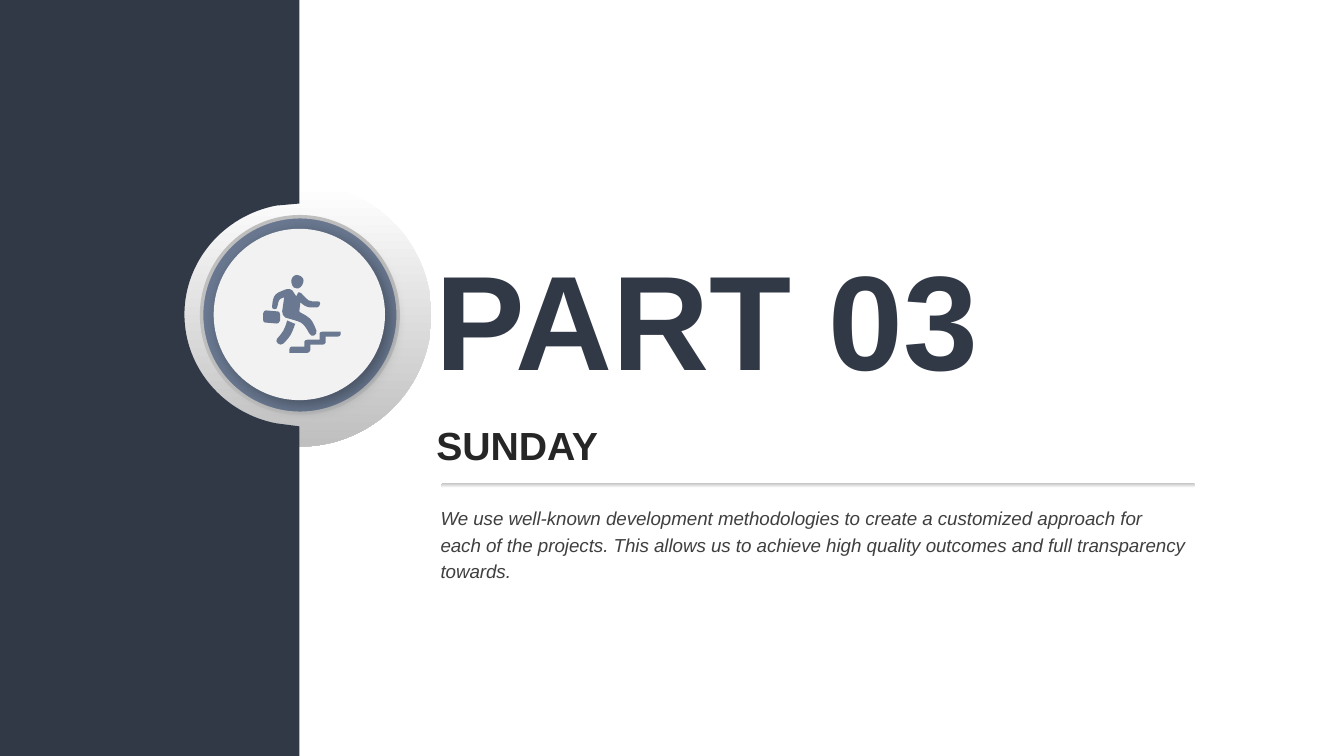
"""Build the PART 03 section slide with its side panel and climber badge."""
from dataclasses import dataclass
from typing import Any, Optional

from lxml import etree
from pptx import Presentation
from pptx.dml.color import RGBColor
from pptx.enum.shapes import MSO_SHAPE
from pptx.enum.text import MSO_ANCHOR, MSO_AUTO_SIZE, PP_ALIGN
from pptx.oxml.ns import qn
from pptx.util import Inches, Pt

OVAL = MSO_SHAPE.OVAL
ROUNDED = MSO_SHAPE.ROUNDED_RECTANGLE
TOP = MSO_ANCHOR.TOP
GROW = MSO_AUTO_SIZE.SHAPE_TO_FIT_TEXT
LEFT = PP_ALIGN.LEFT
JUSTIFIED = PP_ALIGN.JUSTIFY

WHITE = RGBColor(0xFF, 0xFF, 0xFF)
SILVER = RGBColor(0xBF, 0xBF, 0xBF)
PALE = RGBColor(0xF2, 0xF2, 0xF2)
SLATE = RGBColor(0x6A, 0x79, 0x91)
NAVY = RGBColor(0x31, 0x38, 0x46)
SHADOW = RGBColor(0x35, 0x3C, 0x48)
CHARCOAL = RGBColor(0x26, 0x26, 0x26)
GRAY = RGBColor(0x3F, 0x3F, 0x3F)

FONT_NAME = "Arial"
SECTION_LAYOUT = 2

Contour = list[tuple[float, ...]]


@dataclass
class Preset:
    kind: MSO_SHAPE
    box: tuple[float, float, float, float]
    fill: Optional[RGBColor] = None
    line: Optional[RGBColor] = None
    shadow: bool = False


@dataclass
class Outline:
    fill: RGBColor
    contours: list[Contour]


@dataclass
class Label:
    text: str
    box: tuple[float, float, float, float]
    font: dict[str, Any]
    color: RGBColor
    paragraph: dict[str, Any]
    placeholder: Optional[int] = None


BADGE = [
    Preset(OVAL, (1.67, 1.82, 2.61, 2.61)),
    Preset(OVAL, (2, 2.15, 1.95, 1.95), SLATE, SILVER),
    Preset(OVAL, (2.12, 2.27, 1.7, 1.7), PALE, shadow=True),
]
DIVIDER = Preset(ROUNDED, (4.38, 4.79, 7.48, 0.05))

PANEL = Outline(NAVY, [[
    (0, 0), (2.97, 0), (2.97, 2.02), (2.74, 2.04),
    (2.22, 2.14, 1.83, 2.59, 1.83, 3.12),
    (1.83, 3.65, 2.22, 4.1, 2.74, 4.2),
    (2.97, 4.23), (2.97, 7.5), (0, 7.5),
]])

STAIRS = Outline(SLATE, [[
    (2.89, 3.44), (3.02, 3.44), (3.02, 3.39),
    (3.02, 3.38, 3.03, 3.37, 3.05, 3.37), (3.17, 3.37), (3.17, 3.31),
    (3.17, 3.3, 3.18, 3.29, 3.2, 3.29), (3.38, 3.29), (3.38, 3.32),
    (3.38, 3.33, 3.36, 3.34, 3.35, 3.34), (3.23, 3.34), (3.23, 3.4),
    (3.23, 3.41, 3.21, 3.42, 3.2, 3.42), (3.08, 3.42), (3.08, 3.47),
    (3.08, 3.49, 3.06, 3.5, 3.05, 3.5), (2.87, 3.5), (2.87, 3.47),
    (2.87, 3.45, 2.88, 3.44, 2.89, 3.44),
]])

BRIEFCASE: Contour = [
    (2.63, 3.2), (2.75, 3.21), (2.76, 3.21, 2.77, 3.2, 2.78, 3.18),
    (2.78, 3.12), (2.78, 3.11, 2.77, 3.09, 2.76, 3.09), (2.64, 3.08),
    (2.63, 3.08, 2.61, 3.09, 2.61, 3.11), (2.61, 3.17),
    (2.61, 3.19, 2.62, 3.2, 2.63, 3.2),
]
BACK_LEG: Contour = [
    (2.75, 3.36), (2.81, 3.29, 2.82, 3.28, 2.85, 3.18),
    (2.87, 3.19, 2.9, 3.2, 2.92, 3.21), (2.93, 3.21),
    (2.89, 3.32, 2.89, 3.33, 2.81, 3.41), (2.78, 3.44, 2.72, 3.39, 2.75, 3.36),
]
HEAD: Contour = [
    (2.96, 2.73), (3, 2.74, 3.02, 2.77, 3.01, 2.8),
    (3, 2.84, 2.97, 2.87, 2.94, 2.86), (2.9, 2.86, 2.89, 2.81, 2.89, 2.78),
    (2.9, 2.74, 2.93, 2.72, 2.96, 2.73),
]
BODY: Contour = [
    (2.96, 2.9), (2.96, 2.9, 2.98, 2.9, 2.99, 2.91),
    (3.07, 2.99, 3.05, 2.99, 3.15, 2.99), (3.19, 2.98, 3.18, 3.04, 3.15, 3.05),
    (3.06, 3.05, 3.05, 3.06, 2.98, 3), (2.97, 3.09),
    (2.97, 3.09, 2.97, 3.1, 2.98, 3.1), (3.07, 3.15, 3.09, 3.15, 3.14, 3.28),
    (3.15, 3.33, 3.09, 3.35, 3.07, 3.31), (3, 3.18, 2.99, 3.2, 2.83, 3.15),
    (2.81, 3.13, 2.8, 3.12, 2.8, 3.09), (2.82, 2.95),
    (2.76, 2.97, 2.77, 2.97, 2.75, 3.05), (2.75, 3.08, 2.69, 3.07, 2.7, 3.04),
    (2.71, 2.92, 2.73, 2.91, 2.84, 2.87), (2.86, 2.86, 2.89, 2.87, 2.9, 2.88),
    (2.94, 2.94),
]
CLIMBER = Outline(SLATE, [BRIEFCASE, BACK_LEG, HEAD, BODY])

LABELS = [
    Label("PART 03", (4.22, 2.29, 6.3, 1.72),
          {"size": Pt(96), "bold": True, "italic": False}, NAVY,
          {"alignment": LEFT, "line_spacing": 1.0}, 0),
    Label("SUNDAY", (4.23, 4.13, 3.63, 0.57),
          {"size": Pt(28), "bold": True, "italic": False}, CHARCOAL,
          {"alignment": JUSTIFIED, "line_spacing": 1.0}),
    Label("We use well-known development methodologies to create a customized "
          "approach for each of the projects. This allows us to achieve high "
          "quality outcomes and full transparency towards.",
          (4.27, 4.93, 7.59, 0.9),
          {"size": Pt(13.33), "bold": False, "italic": True}, GRAY,
          {"alignment": LEFT, "line_spacing": 1.2}, 1),
]


def set_attributes(target: Any, values: dict[str, Any]) -> None:
    for name, value in values.items():
        setattr(target, name, value)


def add_outer_shadow(shape: Any) -> None:
    effects = shape._element.spPr.find(qn("a:effectLst"))
    shadow = etree.SubElement(effects, qn("a:outerShdw"), blurRad=str(Pt(12)),
                              dist=str(Pt(5)), dir="2700000", algn="tl",
                              rotWithShape="0")
    color = etree.SubElement(shadow, qn("a:srgbClr"), val=str(SHADOW))
    etree.SubElement(color, qn("a:alpha"), val="64000")


def draw_preset(shapes: Any, preset: Preset) -> None:
    shape = shapes.add_shape(preset.kind, *map(Inches, preset.box))
    shape.shadow.inherit = False
    if preset.kind == ROUNDED:
        shape.adjustments[0] = 0.5
    if preset.fill is None:
        shape.fill.gradient()
        shape.fill.gradient_angle = 270
        colors = (WHITE, SILVER) if preset.kind == OVAL else (SILVER, WHITE)
        for stop, color in zip(shape.fill.gradient_stops, colors):
            stop.color.rgb = color
    else:
        shape.fill.solid()
        shape.fill.fore_color.rgb = preset.fill
    if preset.line is None:
        shape.line.fill.background()
    else:
        shape.line.color.rgb = preset.line
        shape.line.width = Pt(2.5)
    if preset.shadow:
        add_outer_shadow(shape)


def bend_segments(shape: Any, contours: list[Contour]) -> None:
    segments = [segment for contour in contours for segment in contour[1:]]
    for line, segment in zip(list(shape._element.iter(qn("a:lnTo"))), segments):
        if len(segment) == 6:
            curve = etree.Element(qn("a:cubicBezTo"))
            for x, y in zip(segment[::2], segment[1::2]):
                etree.SubElement(curve, qn("a:pt"), x=str(Inches(x) - shape.left),
                                 y=str(Inches(y) - shape.top))
            line.getparent().replace(line, curve)


def draw_outline(shapes: Any, outline: Outline) -> None:
    contours = [[(Inches(segment[-2]), Inches(segment[-1])) for segment in contour]
                for contour in outline.contours]
    builder = shapes.build_freeform(*contours[0][0])
    for index, points in enumerate(contours):
        if index:
            builder.move_to(*points[0])
        builder.add_line_segments(points[1:], close=True)
    shape = builder.convert_to_shape()
    bend_segments(shape, outline.contours)
    shape.shadow.inherit = False
    shape.fill.solid()
    shape.fill.fore_color.rgb = outline.fill
    shape.line.fill.background()


def draw_label(slide: Any, label: Label) -> None:
    box = dict(zip(("left", "top", "width", "height"), map(Inches, label.box)))
    if label.placeholder is None:
        shape = slide.shapes.add_textbox(**box)
    else:
        shape = slide.placeholders[label.placeholder]
        set_attributes(shape, box)
    set_attributes(shape.text_frame, {"word_wrap": True, "auto_size": GROW,
                                      "vertical_anchor": TOP})
    paragraph = shape.text_frame.paragraphs[0]
    paragraph.text = label.text
    set_attributes(paragraph, {"space_before": Pt(0), **label.paragraph})
    set_attributes(paragraph.runs[0].font, {"name": FONT_NAME, **label.font})
    paragraph.runs[0].font.color.rgb = label.color


def main() -> None:
    presentation = Presentation()
    set_attributes(presentation, {"slide_width": Inches(40 / 3), "slide_height": Inches(7.5)})
    slide = presentation.slides.add_slide(presentation.slide_layouts[SECTION_LAYOUT])
    badge = slide.shapes.add_group_shape().shapes
    for preset in BADGE:
        draw_preset(badge, preset)
    draw_outline(slide.shapes, PANEL)
    draw_preset(slide.shapes, DIVIDER)
    for label in LABELS:
        draw_label(slide, label)
    icon = slide.shapes.add_group_shape().shapes
    for outline in (STAIRS, CLIMBER):
        draw_outline(icon, outline)
    presentation.save("out.pptx")


if __name__ == "__main__":
    main()
